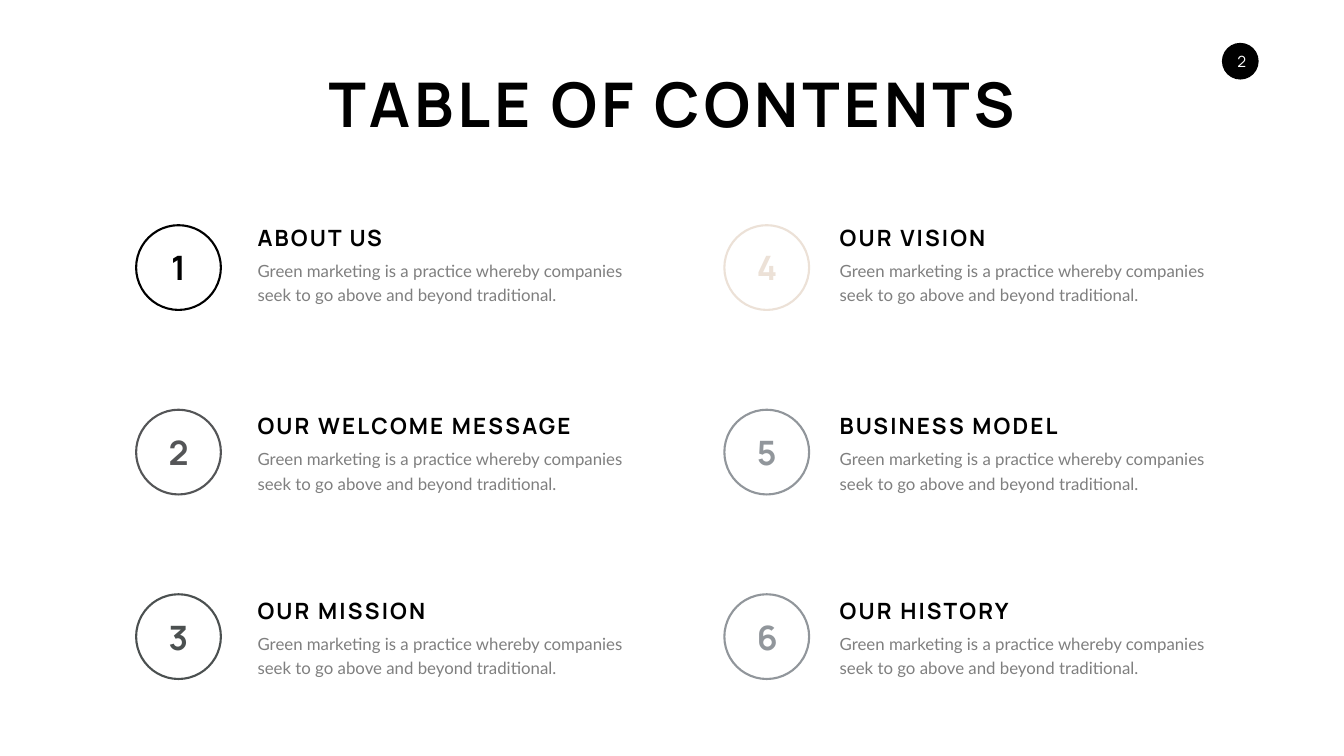
"""Build the table of contents slide with six numbered entries."""
from pptx import Presentation
from pptx.dml.color import RGBColor
from pptx.enum.shapes import MSO_SHAPE
from pptx.enum.text import MSO_ANCHOR, MSO_AUTO_SIZE, PP_ALIGN
from pptx.util import Cm, Pt

OVAL = MSO_SHAPE.OVAL
TOP, MIDDLE = MSO_ANCHOR.TOP, MSO_ANCHOR.MIDDLE
LEFT, CENTER = PP_ALIGN.LEFT, PP_ALIGN.CENTER
GROW = MSO_AUTO_SIZE.SHAPE_TO_FIT_TEXT

COLORS = {
    "black": "000000", "white": "FFFFFF", "body": "7F7F7F", "dark": "545557",
    "slate": "4B5050", "sand": "ECE1D7", "gray": "91969B",
}
TITLE = "TABLE OF CONTENTS"
PAGE = "2"
BLURB = ("Green marketing is a practice whereby companies "
         "seek to go above and beyond traditional.")
ITEMS = [
    ("ABOUT US", "black", 7.06),
    ("OUR WELCOME MESSAGE", "dark", 16.64),
    ("OUR MISSION", "slate", 9.25),
    ("OUR VISION", "sand", 8.23),
    ("BUSINESS MODEL", "gray", 11.63),
    ("OUR HISTORY", "gray", 9.32),
]
COLS = [(6.86, 12.73), (36.5, 42.06)]
HEAD_TOPS = [11.15, 20.65, 29.95]
ROWS = len(HEAD_TOPS)
RING_TOP, STEP, RING = 11.35, 9.3, 4.27
NUM_W, NUM_H = 1.5, 2.31
HEAD_H = 1.63


def color(name):
    return RGBColor.from_string(COLORS[name])


def add_ring(slide, x, y, size, fill, line=None):
    ring = slide.shapes.add_shape(OVAL, Cm(x), Cm(y), Cm(size), Cm(size))
    ring.shadow.inherit = False
    ring.fill.solid()
    ring.fill.fore_color.rgb = color(fill)
    if line:
        ring.line.color.rgb = color(line)
        ring.line.width = Pt(3)
    else:
        ring.line.fill.background()


def add_text(slide, text, box, size, tint, face="Manrope", bold=False,
             align=LEFT, anchor=MIDDLE, wrap=False, track=0, lead=None):
    shape = slide.shapes.add_textbox(*(Cm(v) for v in box))
    frame = shape.text_frame
    frame.word_wrap = wrap
    frame.auto_size = GROW
    frame.vertical_anchor = anchor
    para = frame.paragraphs[0]
    para.alignment = align
    if lead:
        para.line_spacing = Pt(lead)
    run = para.add_run()
    run.text = text
    font = para.font
    font.name, font.size, font.bold = face, Pt(size), bold
    font.color.rgb = color(tint)
    if track:
        run.font._element.set("spc", str(track * 100))


def add_item(slide, index, head, tint, width):
    col, row = divmod(index, ROWS)
    ring_x, text_x = COLS[col]
    ring_y, head_y = RING_TOP + row * STEP, HEAD_TOPS[row]
    add_ring(slide, ring_x, ring_y, RING, "white", tint)
    num = (ring_x + (RING - NUM_W) / 2, ring_y + (RING - NUM_H) / 2, NUM_W, NUM_H)
    add_text(slide, str(index + 1), num, 48, tint, bold=True, align=CENTER)
    add_text(slide, head, (text_x, head_y, width, HEAD_H), 32, "black",
             bold=True, track=3)
    add_text(slide, BLURB, (text_x, head_y + HEAD_H, 18.95, 2.62), 24, "body",
             face="Lato", anchor=TOP, wrap=True, lead=35)


def main():
    deck = Presentation()
    deck.slide_width, deck.slide_height = Cm(67.72), Cm(38.1)
    slide = deck.slides.add_slide(deck.slide_layouts[6])
    add_ring(slide, 61.57, 2.16, 1.85, "black")
    add_text(slide, PAGE, (61.65, 2.16, 1.85, 1.85), 22, "white", align=CENTER)
    add_text(slide, TITLE, (15.88, 3.18, 35.97, 4.01), 88, "black",
             bold=True, align=CENTER, anchor=TOP, track=6)
    for index, item in enumerate(ITEMS):
        add_item(slide, index, *item)
    deck.save("out.pptx")


if __name__ == "__main__":
    main()
